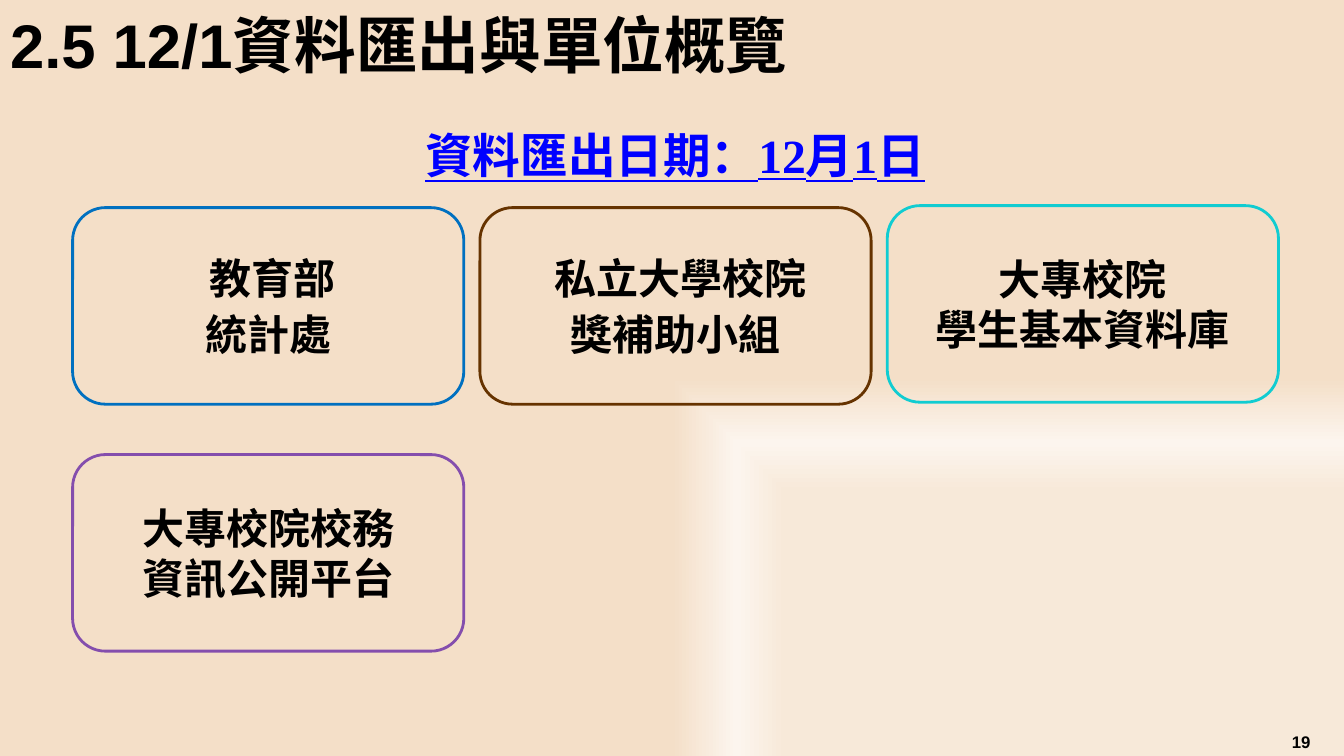
from lxml import etree
from pptx import Presentation
from pptx.dml.color import RGBColor
from pptx.enum import shapes, text
from pptx.oxml import ns
from pptx.util import Inches, Pt

BLACK = RGBColor(0x00, 0x00, 0x00)
LINK = RGBColor(0x00, 0x00, 0xFF)
BLUE = RGBColor(0x00, 0x70, 0xC0)
BROWN = RGBColor(0x66, 0x33, 0x00)
CYAN = RGBColor(0x11, 0xCC, 0xD1)
PURPLE = RGBColor(0x84, 0x4E, 0xAD)
STOPS = [
    (0, RGBColor(0xF7, 0xE8, 0xD7)),
    (70, RGBColor(0xF7, 0xE9, 0xD9)),
    (83, RGBColor(0xFC, 0xF5, 0xEE)),
    (100, RGBColor(0xF4, 0xDF, 0xC8)),
]
TC = "Noto Sans CJK TC"
SC = "Noto Sans CJK SC"
CENTER = text.PP_ALIGN.CENTER


def tag(parent, name, **attrs):
    """Add a drawing element to a parent."""
    return etree.SubElement(parent, ns.qn("a:" + name), attrs)


def paint(slide):
    """Fill the background with a gradient out of the lower right corner."""
    slide.background.fill.gradient()
    grad = slide.element.find(".//" + ns.qn("a:gradFill"))
    for child in list(grad):
        grad.remove(child)
    stops = tag(grad, "gsLst")
    for pos, color in STOPS:
        stop = tag(stops, "gs", pos=str(pos * 1000))
        tag(stop, "srgbClr", val=str(color))
    focus = tag(grad, "path", path="rect")
    tag(focus, "fillToRect", l="100000", t="100000")


def place(shape, left, top, width, height):
    """Set the bounds of a shape in inches."""
    shape.left, shape.top = Inches(left), Inches(top)
    shape.width, shape.height = Inches(width), Inches(height)


def write(shape, lines, size, face, asian=TC, color=BLACK, align=CENTER,
          anchor=text.MSO_ANCHOR.MIDDLE, space=None, after=None):
    """Write bold lines into a shape and return its paragraphs."""
    frame = shape.text_frame
    frame.word_wrap = True
    frame.vertical_anchor = anchor
    frame.text = "\n".join(lines)
    for para in frame.paragraphs:
        para.alignment = align
        para.line_spacing = space
        para.space_after = after
        font = para.font
        font.name, font.size, font.bold = face, Pt(size), True
        font.color.rgb = color
        latin = para._p.find(".//" + ns.qn("a:latin"))
        latin.addnext(etree.Element(ns.qn("a:ea"), typeface=asian))
    return frame.paragraphs


def label(slide, bounds, line, size, face, **style):
    """Add a text box with one line."""
    box = slide.shapes.add_textbox(*map(Inches, bounds))
    return write(box, [line], size, face, **style)[0]


def card(slide, left, top, color, lines, face=SC, after=None):
    """Add an outlined rounded card for one unit."""
    box = slide.shapes.add_shape(
        shapes.MSO_SHAPE.ROUNDED_RECTANGLE,
        *map(Inches, (left, top, 3.88, 1.95)))
    box.shadow.inherit = False
    box.fill.background()
    box.line.color.rgb = color
    box.line.width = Pt(2)
    write(box, lines, 30, face, asian=face, after=after)


def main():
    """Build the slide."""
    deck = Presentation()
    deck.slide_width, deck.slide_height = Inches(13.33), Inches(7.5)
    slide = deck.slides.add_slide(deck.slide_layouts[5])
    paint(slide)
    title = slide.shapes.title
    place(title, 0, 0.15, 9.75, 0.67)
    write(title, ["2.5 12/1資料匯出與單位概覽"], 44, "Arial",
          align=text.PP_ALIGN.LEFT, space=0.9)
    title.text_frame.auto_size = text.MSO_AUTO_SIZE.NONE
    date = label(slide, (1.92, 0.92, 9.55, 0.96), "資料匯出日期：12月1日",
                 34, "Times New Roman", color=LINK, space=1.5,
                 anchor=text.MSO_ANCHOR.TOP)
    date.font.underline = True
    lefts = [0.72 + 4.04 * col for col in range(3)]
    card(slide, lefts[0], 2.06, BLUE, [" 教育部", "統計處"], TC, Pt(4))
    card(slide, lefts[1], 2.06, BROWN, [" 私立大學校院", "獎補助小組"],
         after=Pt(4))
    card(slide, lefts[2], 2.04, CYAN, ["大專校院", "學生基本資料庫"])
    card(slide, lefts[0], 4.51, PURPLE, ["大專校院校務", "資訊公開平台"])
    label(slide, (12.48, 7.22, 0.85, 0.28), "19", 12, "Arial")
    deck.save("out.pptx")


if __name__ == "__main__":
    main()
